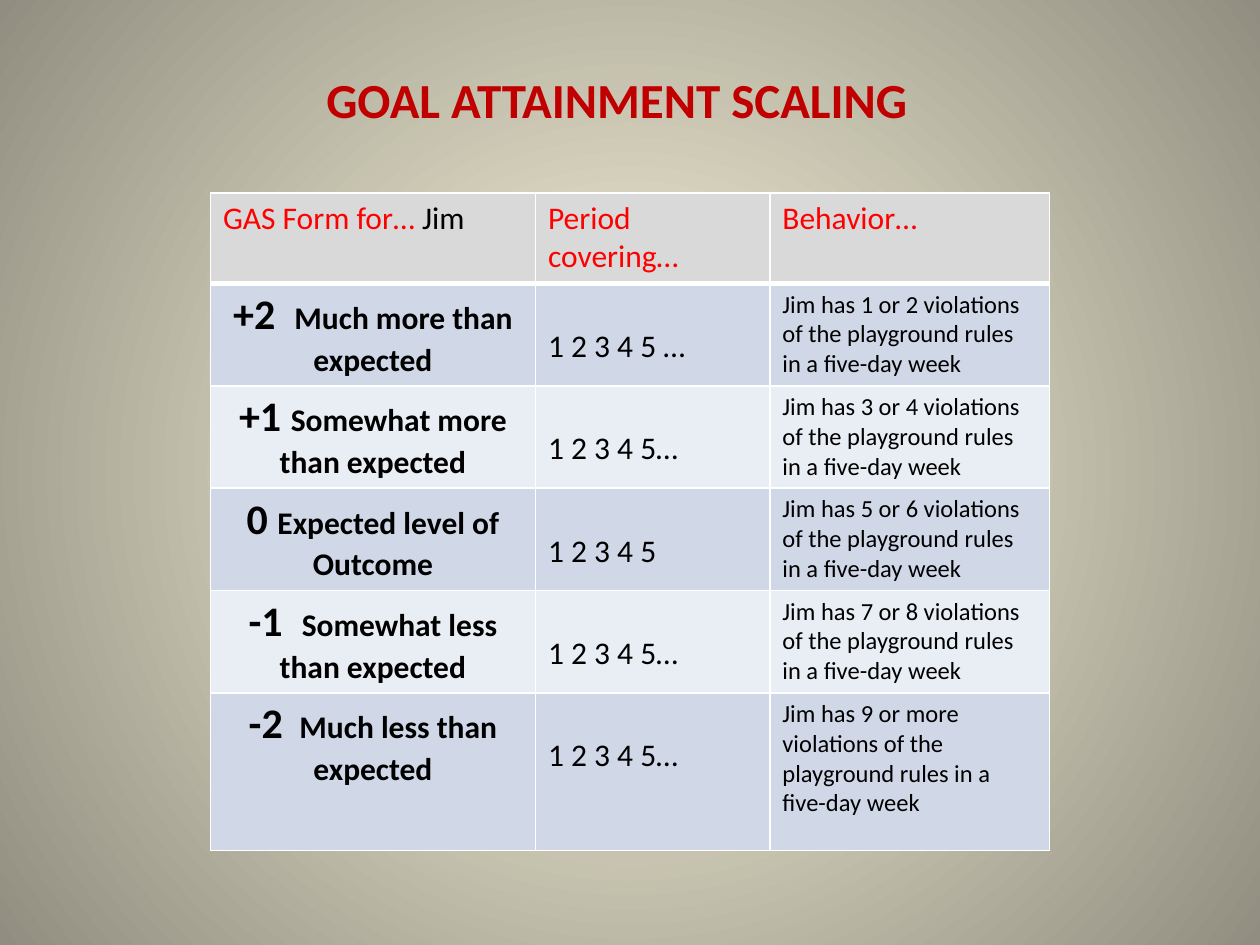
from lxml.etree import SubElement
from pptx import Presentation
from pptx.dml.color import RGBColor
from pptx.enum.text import MSO_ANCHOR, PP_ALIGN
from pptx.oxml.ns import qn
from pptx.util import Inches, Pt


def add_run(p, text, size, color="000000", bold=False):
    r = p.add_run()
    r.text = text
    r.font.name = "Calibri"
    r.font.size = Pt(size)
    r.font.bold = bold
    r.font.color.rgb = RGBColor.from_string(color)


def style_cell(cell, fill, bottom=1):
    """Give the cell white borders (bottom width in points) and a solid fill."""
    tc_pr = cell._tc.get_or_add_tcPr()
    for tag, width in (("lnL", 1), ("lnR", 1), ("lnT", 1), ("lnB", bottom)):
        ln = SubElement(tc_pr, qn(f"a:{tag}"), w=str(Pt(width)))
        SubElement(SubElement(ln, qn("a:solidFill")), qn("a:srgbClr"), val="FFFFFF")
    cell.fill.solid()
    cell.fill.fore_color.rgb = RGBColor.from_string(fill)


prs = Presentation()
prs.slide_width, prs.slide_height = Inches(10), Inches(7.5)
s = prs.slides.add_slide(prs.slide_layouts[5])

# Background: circular gradient, light in the centre
bg = s.background.fill
bg.gradient()
for stop, color, position in zip(bg.gradient_stops, ("FCF7DD", "918E81"), (0, 1)):
    stop.color.rgb = RGBColor.from_string(color)
    stop.position = position
lin = next(s._element.iter(qn("a:lin")))
grad = lin.getparent()
grad.remove(lin)
circle = SubElement(grad, qn("a:path"), path="circle")
SubElement(circle, qn("a:fillToRect"), l="50000", t="50000", r="50000", b="50000")

# Title
title = s.shapes.title
title.left, title.top = Inches(2.33), Inches(0.5)
title.width, title.height = Inches(5.13), Inches(0.57)
tf = title.text_frame
tf.word_wrap = True
tf.vertical_anchor = MSO_ANCHOR.MIDDLE
p = tf.paragraphs[0]
p.alignment = PP_ALIGN.CENTER
add_run(p, "GOAL ATTAINMENT SCALING", 28, "C00000", bold=True)

# Table
header = [
    [("GAS Form for… ", "FF0000"), ("Jim", "000000")],
    [("Period covering…", "FF0000")],
    [("Behavior…", "FF0000")],
]
levels = [
    ("+2  ", "Much more than expected", "1 2 3 4 5 …", "1 or 2 violations"),
    ("+1 ", "Somewhat more than expected", "1 2 3 4 5…", "3 or 4 violations"),
    ("0 ", "Expected level of Outcome", "1 2 3 4 5", "5 or 6 violations"),
    ("-1  ", "Somewhat less than expected", "1 2 3 4 5…", "7 or 8 violations"),
    ("-2 ", " Much less than expected", "1 2 3 4 5…", "9 or more violations"),
]
col_widths = [2.58, 1.86, 2.22]
row_heights = [0.72] + [0.81] * 4 + [1.25]
table = s.shapes.add_table(
    len(row_heights), len(col_widths), Inches(1.67), Inches(1.53),
    Inches(sum(col_widths)), Inches(sum(row_heights))).table
for column, width in zip(table.columns, col_widths):
    column.width = Inches(width)
for row, height in zip(table.rows, row_heights):
    row.height = Inches(height)

for cell, runs in zip(table.rows[0].cells, header):
    style_cell(cell, "D9D9D9", bottom=3)
    for text, color in runs:
        add_run(cell.text_frame.paragraphs[0], text, 18, color)

for i, (score, label, period, count) in enumerate(levels, start=1):
    cells = list(table.rows[i].cells)
    for cell in cells:
        style_cell(cell, "D0D8E8" if i % 2 else "E9EDF4")
    level_p, period_p, behavior_p = (c.text_frame.paragraphs[0] for c in cells)
    level_p.alignment = PP_ALIGN.CENTER
    add_run(level_p, score, 24, bold=True)
    add_run(level_p, label, 18, bold=True)
    cells[1].margin_top = Inches(0.35)
    add_run(period_p, period, 18)
    add_run(behavior_p, f"Jim has {count} of the playground rules in a five-day week", 14)

prs.save("out.pptx")
